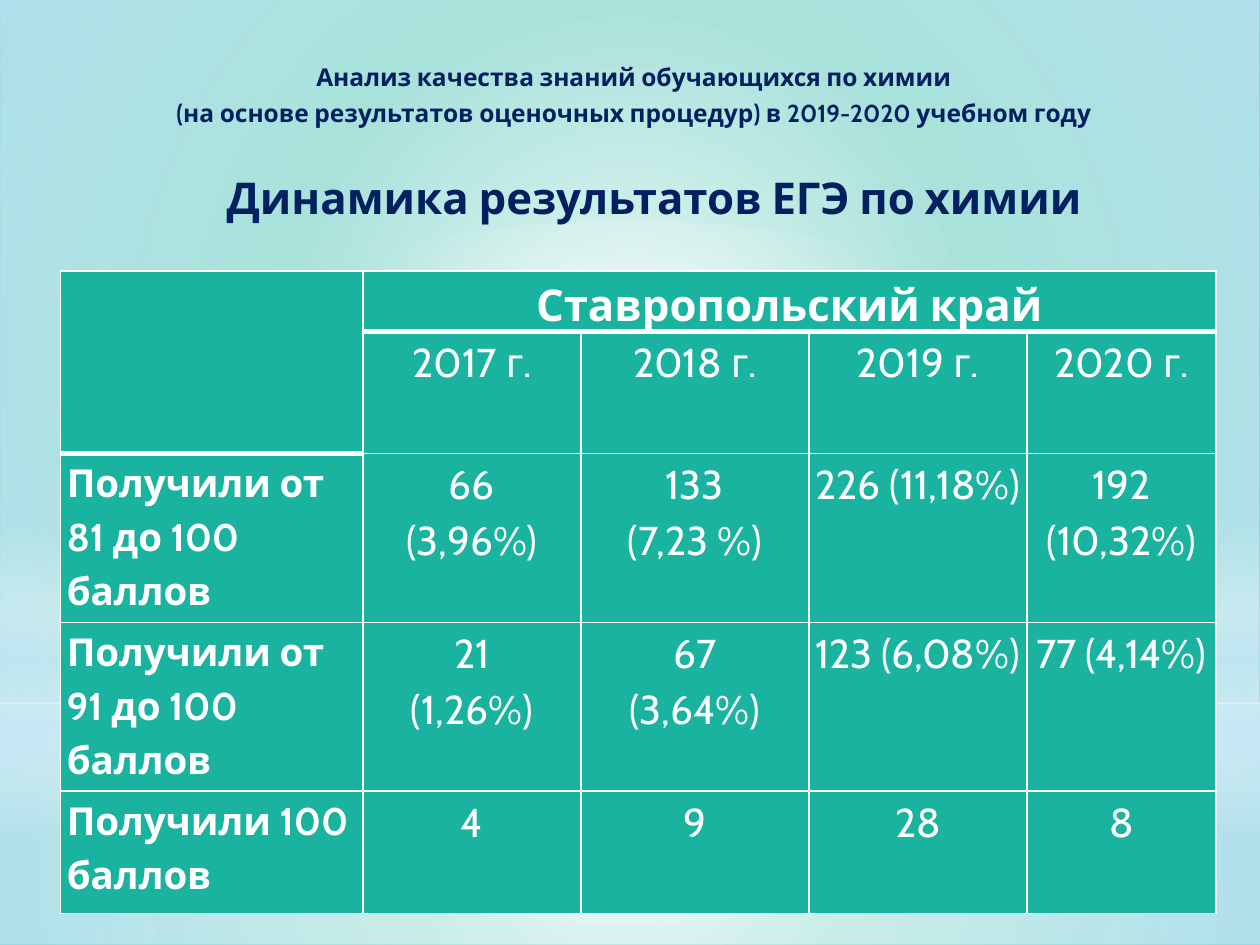
"""Build a slide with a table of chemistry exam results by year."""
from lxml import etree
from pptx import Presentation
from pptx.dml.color import RGBColor
from pptx.enum.shapes import MSO_SHAPE
from pptx.enum.text import PP_ALIGN
from pptx.oxml import parse_xml
from pptx.util import Inches, Pt

RECT, OVAL = MSO_SHAPE.RECTANGLE, MSO_SHAPE.OVAL
LEFT, MID = PP_ALIGN.LEFT, PP_ALIGN.CENTER
TEAL = RGBColor(0x1A, 0xB3, 0x9F)
NAVY = RGBColor(0x00, 0x20, 0x60)
WHITE = RGBColor(0xFF, 0xFF, 0xFF)
ICE = RGBColor(0xD6, 0xEC, 0xFF)
FONT = "Cabin"
NS = "http://schemas.openxmlformats.org/drawingml/2006/main"
WIDE, HIGH = 10, 7.5

ROUND = '<a:path path="circle"><a:fillToRect l="50000" t="50000" r="50000" b="50000"/></a:path>'
DOWN = '<a:lin ang="5400000" scaled="0"/>'
GLOWS = [
    (RECT, 5.58, 1.92, ROUND, [(0, WHITE, 91), (37, WHITE, 76), (100, ICE, 79)]),
    (RECT, 0, 5.58, ROUND, [(0, WHITE, 89), (48, WHITE, 62), (100, ICE, 79)]),
    (RECT, 4.12, 2.5, DOWN, [(0, WHITE, 0), (29, WHITE, 30), (45, ICE, 40),
                             (55, WHITE, 26), (65, ICE, 60), (100, WHITE, 0)]),
    (OVAL, 1.75, 5.58, ROUND, [(0, WHITE, 100), (56, WHITE, 0)]),
]
HEADS = [
    (0.28, 0.44, 14, "Анализ качества знаний обучающихся по химии\n"
                     "(на основе результатов оценочных процедур) в 2019-2020 учебном году"),
    (0.44, 1.31, 25, "Динамика результатов ЕГЭ по химии"),
]
ROWS = [
    ["", "Ставропольский край", "", "", ""],
    ["", "2017 г.", "2018 г.", "2019 г.", "2020 г."],
    ["Получили от 81 до 100 баллов", "66\n(3,96%)", "133\n(7,23 %)", "226 (11,18%)", "192 (10,32%)"],
    ["Получили от 91 до 100 баллов", "21\n(1,26%)", "67\n(3,64%)", "123 (6,08%)", "77 (4,14%)"],
    ["Получили 100 баллов", "4", "9", "28", "8"],
]
COLS = [2.4, 1.73, 1.81, 1.73, 1.5]
TALL = [0.48, 0.97, 1.34, 1.34, 0.97]


def add_glow(slide, kind, top, high, path, stops):
    shape = slide.shapes.add_shape(kind, 0, Inches(top), Inches(WIDE), Inches(high))
    shape.shadow.inherit = False
    shape.line.fill.background()
    marks = "".join(
        f'<a:gs pos="{pos * 1000}"><a:srgbClr val="{color}">'
        f'<a:alpha val="{alpha * 1000}"/></a:srgbClr></a:gs>' for pos, color, alpha in stops)
    grad = parse_xml(f'<a:gradFill xmlns:a="{NS}" rotWithShape="1"><a:gsLst>{marks}</a:gsLst>{path}</a:gradFill>')
    shape.fill.background()
    blank = shape._element.spPr.find(f"{{{NS}}}noFill")
    blank.getparent().replace(blank, grad)


def style(frame, size, color, bold, align):
    for para in frame.paragraphs:
        para.alignment = align
        for run in para.runs:
            font = run.font
            font.name, font.size, font.bold = FONT, Pt(size), bold
            font.color.rgb = color


def add_head(slide, left, top, size, text):
    box = slide.shapes.add_textbox(Inches(left), Inches(top), Inches(9.45), Inches(0.87))
    frame = box.text_frame
    frame.word_wrap = True
    frame.margin_left = Inches(0.15)
    frame.text = text
    style(frame, size, NAVY, True, MID)
    for para in frame.paragraphs:
        para.space_after = Pt(4)


def thick(row, col):
    return row == 0 or (row, col) == (1, 0)


def add_edges(cell, row, col):
    props = cell._tc.get_or_add_tcPr()
    wide = {"L": 1, "R": 1, "T": 3 if thick(row - 1, col) else 1, "B": 3 if thick(row, col) else 1}
    for side, width in wide.items():
        line = etree.SubElement(props, f"{{{NS}}}ln{side}", w=str(Pt(width)))
        fill = etree.SubElement(line, f"{{{NS}}}solidFill")
        etree.SubElement(fill, f"{{{NS}}}srgbClr", val=str(WHITE))


def fill_cell(cell, row, col, text):
    add_edges(cell, row, col)
    cell.fill.solid()
    cell.fill.fore_color.rgb = TEAL
    cell.margin_left = cell.margin_right = Inches(0.05)
    cell.margin_top = cell.margin_bottom = 0
    if not text:
        return
    cell.text_frame.text = text
    size = 25 if row == 0 else 22 if col == 0 else 23
    style(cell.text_frame, size, WHITE, row == 0 or col == 0, MID if col else LEFT)
    for para in cell.text_frame.paragraphs:
        para.line_spacing = 1.15


def add_grid(slide):
    frame = slide.shapes.add_table(len(ROWS), len(COLS), Inches(0.48), Inches(2.15),
                                   Inches(sum(COLS)), Inches(sum(TALL)))
    table = frame.table
    table.horz_banding = False
    for col, width in zip(table.columns, COLS):
        col.width = Inches(width)
    for row, height in zip(table.rows, TALL):
        row.height = Inches(height)
    for r, texts in enumerate(ROWS):
        for c, text in enumerate(texts):
            fill_cell(table.cell(r, c), r, c, text)
    table.cell(0, 0).merge(table.cell(1, 0))
    table.cell(0, 1).merge(table.cell(0, 4))


def main():
    deck = Presentation()
    deck.slide_width, deck.slide_height = Inches(WIDE), Inches(HIGH)
    slide = deck.slides.add_slide(deck.slide_layouts[6])
    back = slide.background.fill
    back.solid()
    back.fore_color.rgb = TEAL
    for glow in GLOWS:
        add_glow(slide, *glow)
    for head in HEADS:
        add_head(slide, *head)
    add_grid(slide)
    deck.save("out.pptx")


if __name__ == "__main__":
    main()
